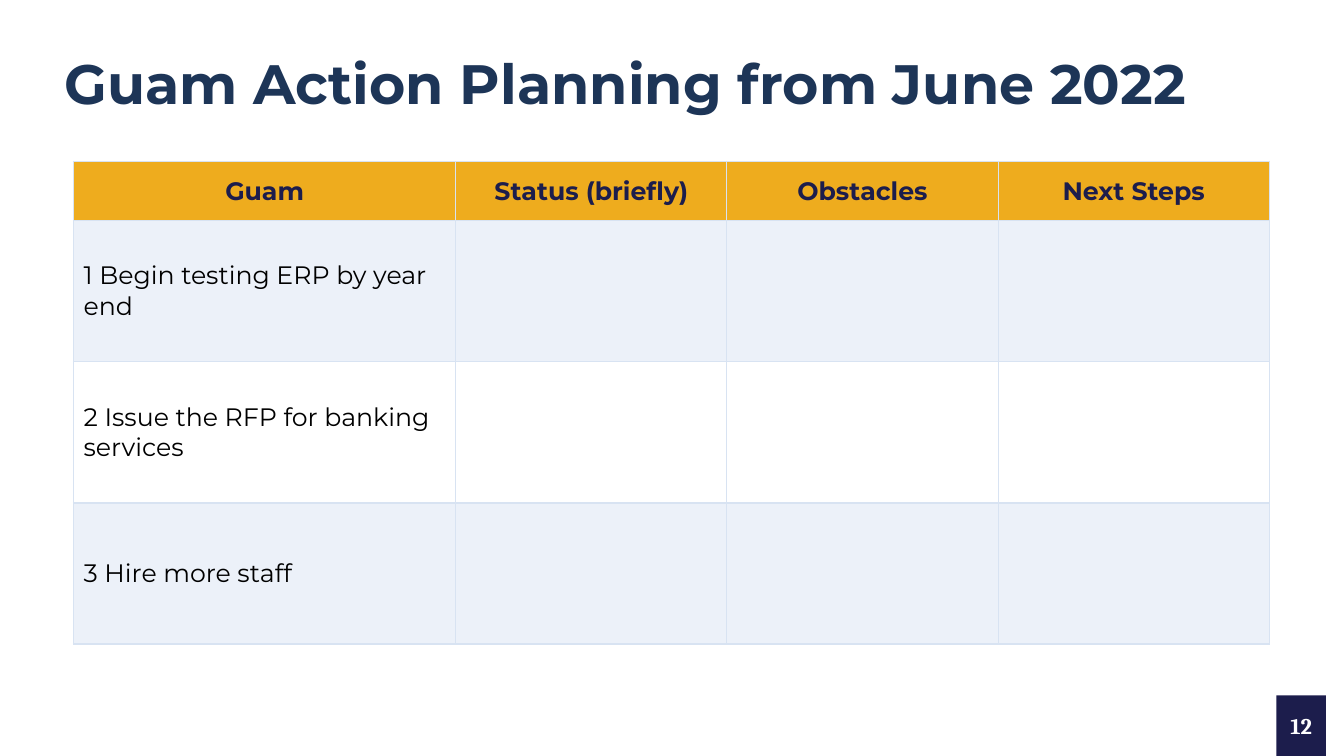
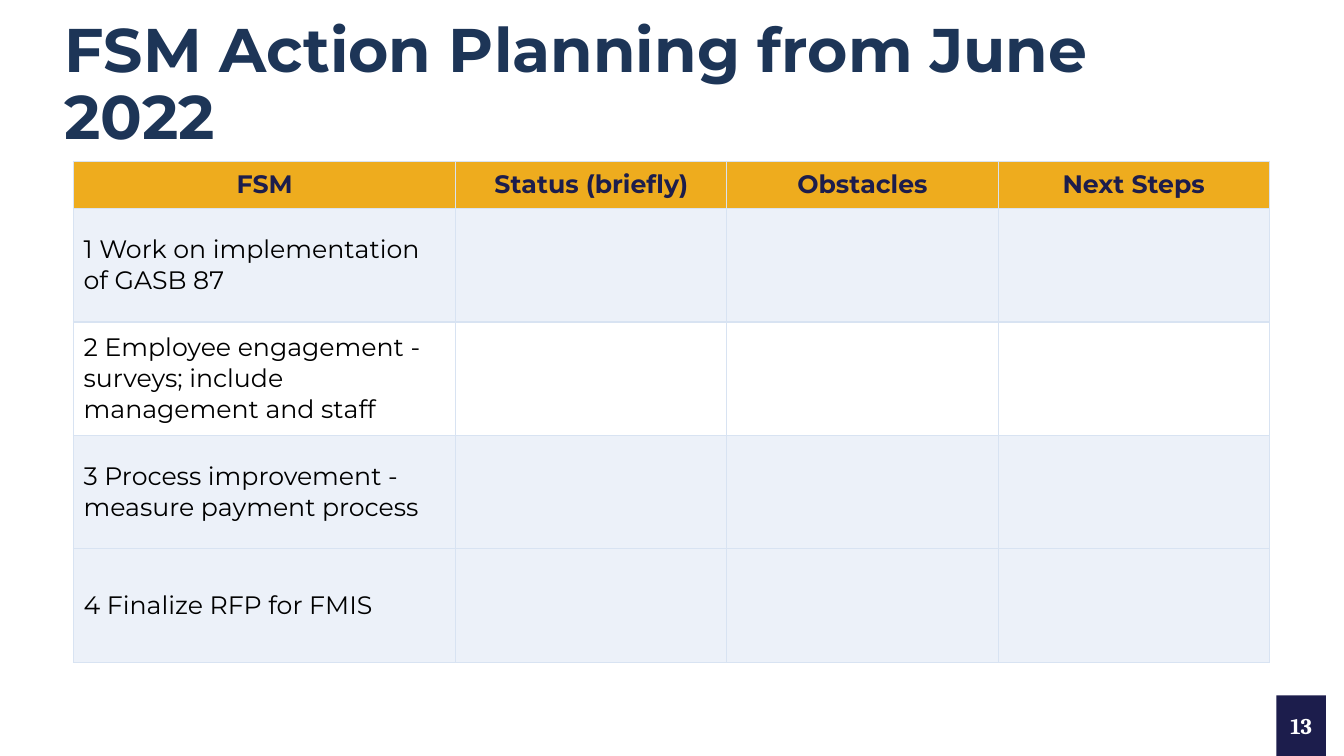
import lxml.etree
import pptx
import pptx.dml.color
import pptx.enum.shapes
import pptx.enum.text
import pptx.oxml.ns
import pptx.util

Inches = pptx.util.Inches
Pt = pptx.util.Pt
ALIGN = pptx.enum.text.PP_ALIGN
MIDDLE = pptx.enum.text.MSO_ANCHOR.MIDDLE

COLORS = {
    "title": "1D3557",
    "navy": "1C1D4C",
    "gold": "EEAC1E",
    "band": "ECF1F9",
    "border": "D8E3F2",
    "text": "000000",
    "white": "FFFFFF",
}
FONT = "Montserrat"
NUMBER_FONT = "Cambria"
TITLE_ONLY_LAYOUT = 5
COLUMN_WIDTHS = [3.79, 2.69, 2.69, 2.69]
SHARED_HEADINGS = ["Status (briefly)", "Obstacles", "Next Steps"]

PLANS = [
    {
        "place": "Guam",
        "title_size": 39.6,
        "page": 12,
        "header_height": 0.59,
        "row_height": 1.4,
        "actions": [
            "1 Begin testing ERP by year end",
            "2 Issue the RFP for banking services",
            "3 Hire more staff",
        ],
        "banded_rows": {1, 3},
    },
    {
        "place": "FSM",
        "title_size": 44,
        "page": 13,
        "header_height": 0.47,
        "row_height": 1.125,
        "actions": [
            "1 Work on implementation of GASB 87",
            "2 Employee engagement - surveys; include management and staff",
            "3 Process improvement - measure payment process",
            "4 Finalize RFP for FMIS",
        ],
        "banded_rows": {1, 3, 4},
    },
]


def rgb(name):
    return pptx.dml.color.RGBColor.from_string(COLORS[name])


def write_text(text_frame, text, size, color, bold, align=ALIGN.LEFT, font=FONT):
    """Fill the first paragraph with one formatted run and return the paragraph."""
    paragraph = text_frame.paragraphs[0]
    paragraph.alignment = align
    run = paragraph.add_run()
    run.text = text
    run.font.name = font
    run.font.size = Pt(size)
    run.font.bold = bold
    run.font.color.rgb = rgb(color)
    return paragraph


def add_title(slide, text, size):
    title = slide.shapes.title
    title.left, title.top = Inches(0.54), Inches(0.33)
    title.width, title.height = Inches(11.99), Inches(1.05)
    text_frame = title.text_frame
    text_frame.auto_size = pptx.enum.text.MSO_AUTO_SIZE.NONE
    text_frame.word_wrap = True
    text_frame.vertical_anchor = MIDDLE
    paragraph = write_text(text_frame, text, size, "title", True)
    paragraph.line_spacing = 0.9


def add_borders(cell):
    """Draw all four sides; call before the fill, which must follow in the XML."""
    properties = cell._tc.get_or_add_tcPr()
    for side in ("a:lnL", "a:lnR", "a:lnT", "a:lnB"):
        line = lxml.etree.SubElement(
            properties, pptx.oxml.ns.qn(side), w=str(Pt(1)))
        fill = lxml.etree.SubElement(line, pptx.oxml.ns.qn("a:solidFill"))
        lxml.etree.SubElement(
            fill, pptx.oxml.ns.qn("a:srgbClr"), val=COLORS["border"])


def format_cell(cell, fill_color=None):
    add_borders(cell)
    cell.vertical_anchor = MIDDLE
    if fill_color:
        cell.fill.solid()
        cell.fill.fore_color.rgb = rgb(fill_color)
    else:
        cell.fill.background()


def add_action_table(slide, plan):
    heights = [plan["header_height"]] + [plan["row_height"]] * len(plan["actions"])
    frame = slide.shapes.add_table(
        len(heights), len(COLUMN_WIDTHS), Inches(0.73), Inches(1.6),
        Inches(sum(COLUMN_WIDTHS)), Inches(sum(heights)))
    table = frame.table
    table.horz_banding = False
    for column, width in zip(table.columns, COLUMN_WIDTHS):
        column.width = Inches(width)
    for row, height in zip(table.rows, heights):
        row.height = Inches(height)

    for cell, heading in zip(table.rows[0].cells, [plan["place"]] + SHARED_HEADINGS):
        format_cell(cell, "gold")
        write_text(cell.text_frame, heading, 18, "navy", True, ALIGN.CENTER)
    for index, action in enumerate(plan["actions"], start=1):
        for cell in table.rows[index].cells:
            format_cell(cell, "band" if index in plan["banded_rows"] else None)
        write_text(table.cell(index, 0).text_frame, action, 18, "text", False)


def add_page_number(slide, number):
    shape = slide.shapes.add_shape(
        pptx.enum.shapes.MSO_SHAPE.RECTANGLE,
        Inches(12.66), Inches(6.9), Inches(0.49), Inches(0.6))
    shape.shadow.inherit = False
    shape.fill.solid()
    shape.fill.fore_color.rgb = rgb("navy")
    shape.line.fill.background()
    text_frame = shape.text_frame
    text_frame.margin_left = text_frame.margin_right = 0
    text_frame.vertical_anchor = MIDDLE
    write_text(text_frame, str(number), 16, "white", True, ALIGN.CENTER, NUMBER_FONT)


def add_plan_slide(presentation, plan):
    slide = presentation.slides.add_slide(
        presentation.slide_layouts[TITLE_ONLY_LAYOUT])
    add_title(slide, f"{plan['place']} Action Planning from June 2022",
              plan["title_size"])
    add_action_table(slide, plan)
    add_page_number(slide, plan["page"])


def main():
    presentation = pptx.Presentation()
    presentation.slide_width = Inches(13.33)
    presentation.slide_height = Inches(7.5)
    for plan in PLANS:
        add_plan_slide(presentation, plan)
    presentation.save("out.pptx")


if __name__ == "__main__":
    main()
